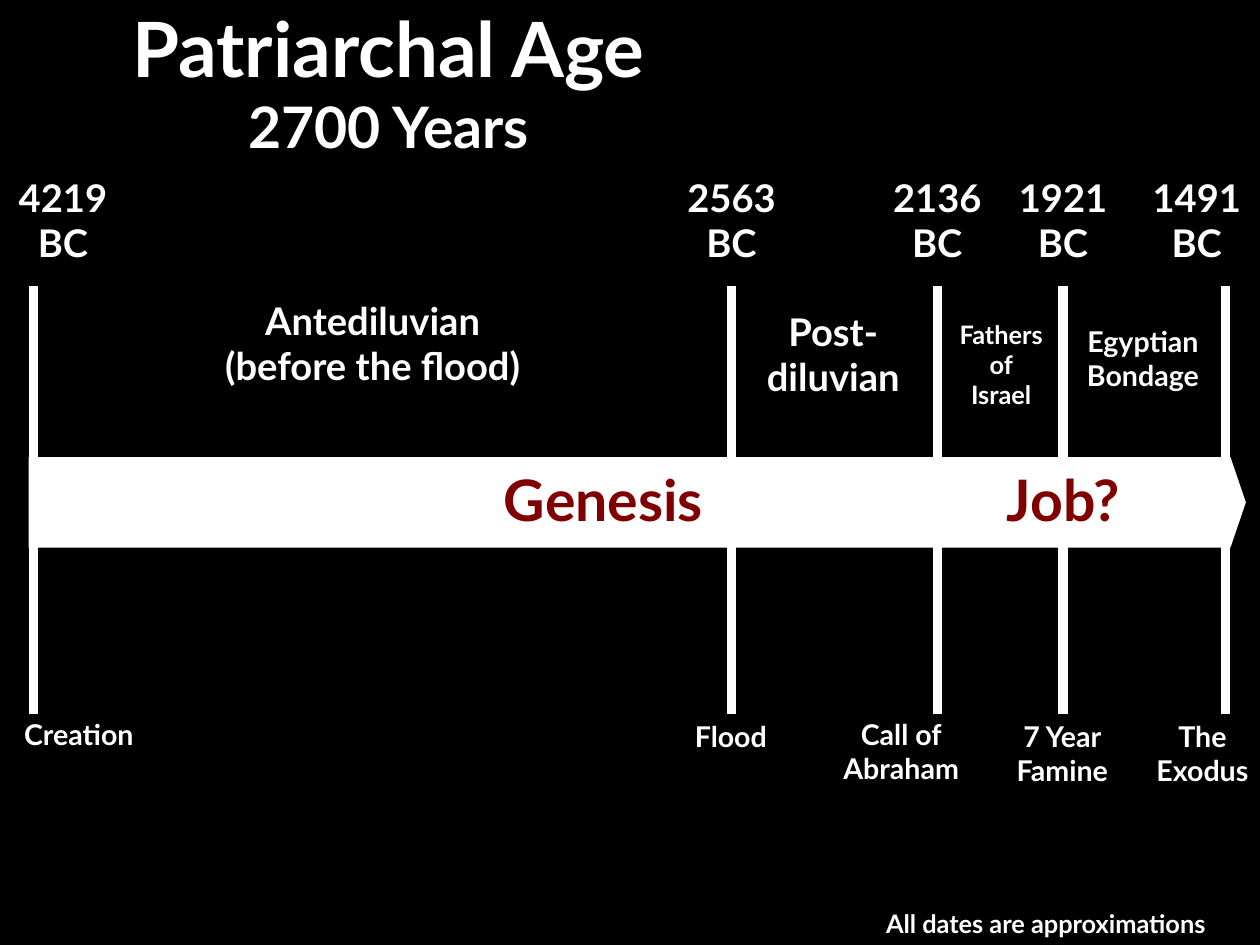
from pptx import Presentation
from pptx import util as u
from pptx.dml.color import RGBColor
from pptx.enum import shapes, text
from pptx.oxml.ns import qn
from lxml import etree

# Slide size, and a grid of square cells, ten to the inch
WIDE, TALL = u.Cm(28), u.Cm(21)
CELL = u.Inches(0.1)
LEAD = 0.98
HUES = {"back": "000000", "front": "FFFFFF", "book": "800000"}

# Band of the arrow and reach of the date lines
TOP, BASE = 40, 47.9
UPPER, LOWER = (25, 40), (47.5, 62.5)

# Line column; date and its centre; event, its centre, top and width
EVENTS = [
    (2.9, "4219", 5.5, "Creation", 6.9, 62.4, 14),
    (64, "2563", 64, "Flood", 63.95, 62.6, 9.7),
    (82, "2136", 82, "Call of\nAbraham", 78.85, 62.4, 14.7),
    (93, "1921", 93, "7 Year\nFamine", 92.95, 62.6, 12.3),
    (107.2, "1491", 104.7, "The\nExodus", 105.2, 62.6, 12.1),
]

# Name, centre, top, width, size
ERAS = [
    ("Antediluvian\n(before the flood)", 32.6, 25.7, 35.4, 24),
    ("Post-\ndiluvian", 72.9, 26.7, 17, 24),
    ("Fathers\nof\nIsrael", 87.6, 27.6, 11.6, 16),
    ("Egyptian\nBondage", 100, 28, 14.4, 18),
]

# Name, centre, width
BOOKS = [("Genesis", 55.15, 24.1), ("Job?", 94, 13.8)]


def cells(n):
    return round(n * CELL)


def tint(hue):
    return RGBColor.from_string(HUES[hue])


def label(slide, words, mid, top, wide, size, head=None,
          hue="front", align=text.PP_ALIGN.CENTER):
    """Text centred on a column; head is the size of the first line."""
    sizes = [size] * len(words.split("\n"))
    sizes[0] = head or size
    tall = 1 + sum(sizes) * 1.2 * LEAD / 7.2
    box = slide.shapes.add_textbox(
        cells(mid - wide / 2), cells(top), cells(wide), cells(tall))
    frame = box.text_frame
    frame.word_wrap = True
    frame.text = words
    for para, pts in zip(frame.paragraphs, sizes):
        para.alignment = align
        para.line_spacing = LEAD
        for run in para.runs:
            font = run.font
            font.name, font.size, font.bold = "Lato", u.Pt(pts), True
            font.color.rgb = tint(hue)


def stem(slide, col, start, end):
    line = slide.shapes.add_connector(
        shapes.MSO_CONNECTOR.STRAIGHT,
        cells(col), cells(end), cells(col), cells(start))
    line.line.color.rgb = tint("front")
    line.line.width = u.Pt(5.75)
    etree.SubElement(line._element.spPr, qn("a:effectLst"))


def arrow(slide, left, wide):
    band = slide.shapes.add_shape(
        shapes.MSO_SHAPE.PENTAGON, cells(left), cells(TOP),
        cells(wide), cells(BASE - TOP))
    band.adjustments[0] = 0.17
    band.shadow.inherit = False
    band.fill.solid()
    band.fill.fore_color.rgb = tint("front")
    band.line.fill.background()


def main():
    deck = Presentation()
    deck.slide_width, deck.slide_height = WIDE, TALL
    slide = deck.slides.add_slide(deck.slide_layouts[6])
    fill = slide.background.fill
    fill.solid()
    fill.fore_color.rgb = tint("back")

    # Title
    label(slide, "Patriarchal Age\n2700 Years", 34, 0, 60.1, 36, head=48)

    # Timeline with its dates and events
    arrow(slide, 2.5, 106.5)
    for col, year, mid, event, spot, top, wide in EVENTS:
        stem(slide, col, *UPPER)
        stem(slide, col, *LOWER)
        label(slide, year + "\nBC", mid, 15, 11.2, 24)
        label(slide, event, spot, top, wide, 18)

    # Eras above the arrow, books on it
    for era in ERAS:
        label(slide, *era)
    for book, mid, wide in BOOKS:
        label(slide, book, mid, 40.4, wide, 36,
              hue="book", align=text.PP_ALIGN.LEFT)

    # Footnote
    label(slide, "All dates are approximations", 91.5, 79.1, 38.1, 16)

    deck.save("out.pptx")


if __name__ == "__main__":
    main()
